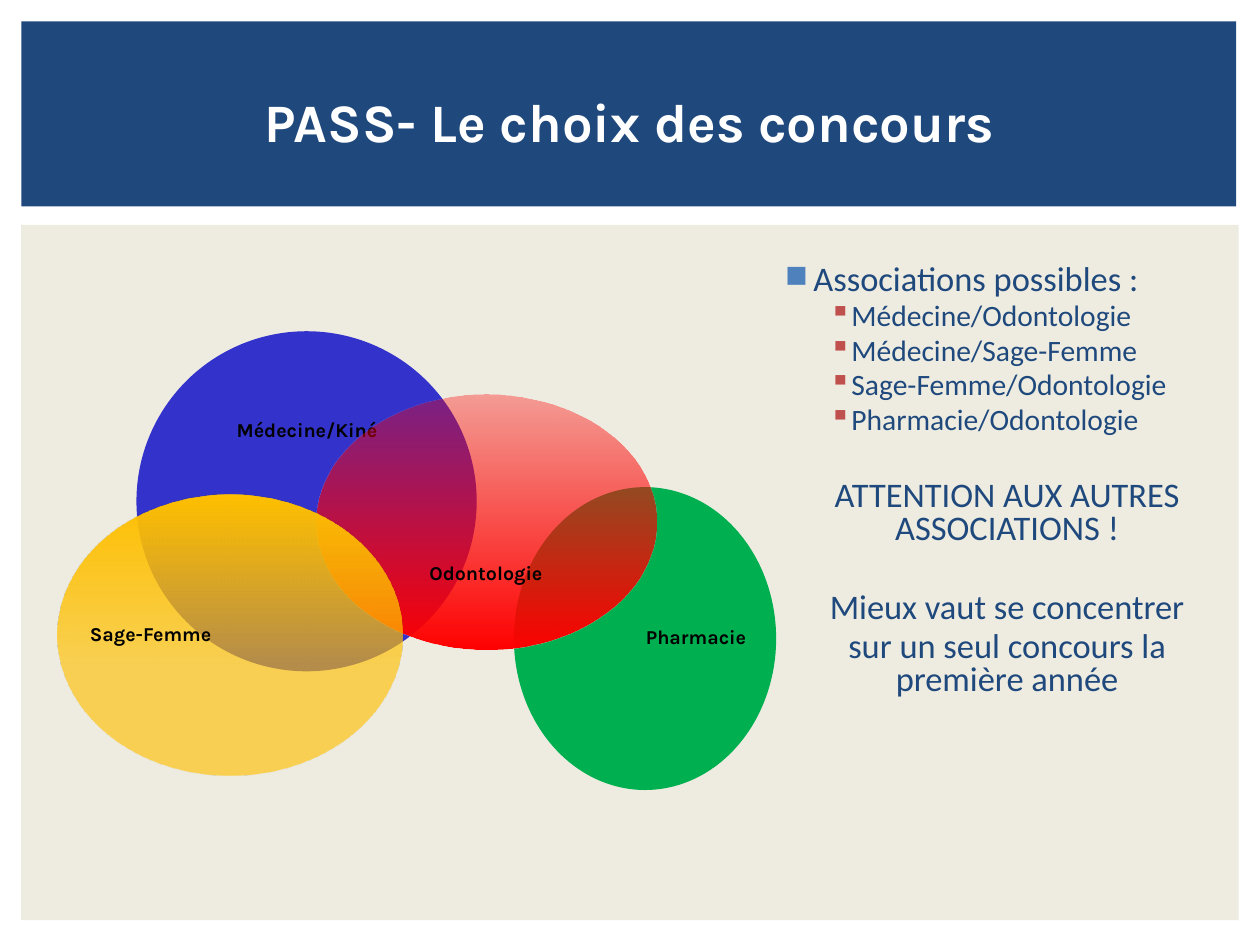
from lxml import etree
from pptx import Presentation
from pptx import util as u
from pptx.dml.color import RGBColor
from pptx.enum import shapes, text
from pptx.oxml.ns import qn

COLOURS = {
    "panel": "EEECE1", "navy": "1F497D", "white": "FFFFFF", "black": "000000",
    "medicine": "3333CC", "pharmacy": "00B050", "dentistry": "FF0000",
    "midwifery": "FFC000", "square": "4F81BD", "small square": "C0504D",
}


def colour(name):
    return RGBColor.from_string(COLOURS[name])


def add_bullet(para, char, tint, size, margin, hanging):
    """Give a paragraph a coloured bullet; size is a percentage, lengths are inches."""
    props = para._p.get_or_add_pPr()
    props.set("marL", str(u.Inches(margin)))
    props.set("indent", str(-u.Inches(hanging)))
    shade = etree.SubElement(props, qn("a:buClr"))
    etree.SubElement(shade, qn("a:srgbClr"), val=COLOURS[tint])
    etree.SubElement(props, qn("a:buSzPct"), val=str(size * 1000))
    etree.SubElement(props, qn("a:buChar"), char=char)


def write(para, words, size=16, font="Karla", tint="black", bold=False,
          align=text.PP_ALIGN.CENTER, spacing=0.9, before=0):
    para.alignment = align
    para.line_spacing = spacing
    para.space_before = u.Pt(before)
    span = para.add_run()
    span.text = words
    span.font.size = u.Pt(size)
    span.font.name = font
    span.font.bold = bold
    span.font.color.rgb = colour(tint)


class SlideBuilder:
    def __init__(self, page):
        self.page = page

    def shape(self, kind, place, tint, stops=None):
        """Draw a borderless shape; stops are (position, opacity %) from top to bottom."""
        shape = self.page.shapes.add_shape(kind, *map(u.Inches, place))
        shape.shadow.inherit = False
        shape.line.fill.background()
        if not stops:
            shape.fill.solid()
            shape.fill.fore_color.rgb = colour(tint)
            return
        shape.fill.gradient()
        shape.fill.gradient_angle = 270
        for stop, (position, opacity) in zip(shape.fill.gradient_stops, stops):
            stop.position = position
            stop.color.rgb = colour(tint)
            shade = stop._gs.find(qn("a:srgbClr"))
            etree.SubElement(shade, qn("a:alpha"), val=str(opacity * 1000))

    def frame(self, box, inset, anchor):
        frame = box.text_frame
        frame.word_wrap = True
        frame.auto_size = text.MSO_AUTO_SIZE.NONE
        frame.vertical_anchor = anchor
        frame.margin_left = frame.margin_right = u.Inches(inset)
        frame.margin_top = frame.margin_bottom = u.Inches(inset)
        return frame

    def textbox(self, place, inset=0, anchor=text.MSO_ANCHOR.MIDDLE):
        box = self.page.shapes.add_textbox(*map(u.Inches, place))
        return self.frame(box, inset, anchor)

    def title(self, words, place):
        """Format the title and bring it in front of the banner."""
        title = self.page.shapes.title
        title.left, title.top, title.width, title.height = map(u.Inches, place)
        frame = self.frame(title, 0.07, text.MSO_ANCHOR.MIDDLE)
        write(frame.paragraphs[0], words, size=44, tint="white", bold=True, spacing=1.0)
        self.page.shapes._spTree.append(title._element)

    def associations(self, place, heading, pairs, warnings):
        """Write the bulleted pairs, then the centred (words, space before) warnings."""
        frame = self.textbox(place, 0.07, text.MSO_ANCHOR.TOP)
        style = dict(font="Calibri", tint="navy", spacing=0.8)
        para = frame.paragraphs[0]
        write(para, heading, size=28, align=text.PP_ALIGN.LEFT, before=5, **style)
        add_bullet(para, "◼", "square", 80, 0.32, 0.32)
        for pair in pairs:
            para = frame.add_paragraph()
            para.level = 1
            write(para, pair, size=24, align=text.PP_ALIGN.LEFT, before=5, **style)
            add_bullet(para, "▪", "small square", 100, 0.5, 0)
        for words, before in warnings:
            write(frame.add_paragraph(), words, size=28, before=before, **style)


def main():
    deck = Presentation()
    deck.slide_width, deck.slide_height = u.Inches(14.22), u.Inches(10.67)
    slide = SlideBuilder(deck.slides.add_slide(deck.slide_layouts[5]))

    rectangle, oval = shapes.MSO_SHAPE.RECTANGLE, shapes.MSO_SHAPE.OVAL
    slide.shape(rectangle, (0.24, 2.54, 13.74, 7.85), "panel")
    slide.shape(rectangle, (0.24, 0.24, 13.71, 2.09), "navy")

    slide.associations(
        (8.79, 2.92, 5.15, 5.41),
        "Associations possibles :",
        ["Médecine/Odontologie", "Médecine/Sage-Femme",
         "Sage-Femme/Odontologie", "Pharmacie/Odontologie"],
        [("ATTENTION AUX AUTRES ASSOCIATIONS !", 37),
         ("Mieux vaut se concentrer", 37),
         ("sur un seul concours la première année", 5)],
    )

    # Name, colour, oval place, gradient stops, label left, top and width
    courses = [
        ("Médecine/Kiné", "medicine", (1.54, 3.74, 3.84, 3.84), None, (1.99, 4.74, 2.95)),
        ("Pharmacie", "pharmacy", (5.8, 5.5, 2.96, 3.42), None, (7.18, 7.07, 1.35)),
        ("Odontologie", "dentistry", (3.57, 4.45, 3.84, 2.88),
         [(0, 34), (1, 100)], (4.01, 6.35, 2.95)),
        ("Sage-Femme", "midwifery", (0.65, 5.59, 3.89, 3.17),
         [(0, 100), (0.61, 63)], (0.95, 7.04, 1.5)),
    ]
    for name, tint, place, stops, label in courses:
        slide.shape(oval, place, tint, stops)
        frame = slide.textbox((*label, 0.26))
        write(frame.paragraphs[0], name, bold=True)

    slide.title("PASS- Le choix des concours", (0.59, 0.93, 13.04, 0.88))
    deck.save("out.pptx")


if __name__ == "__main__":
    main()
